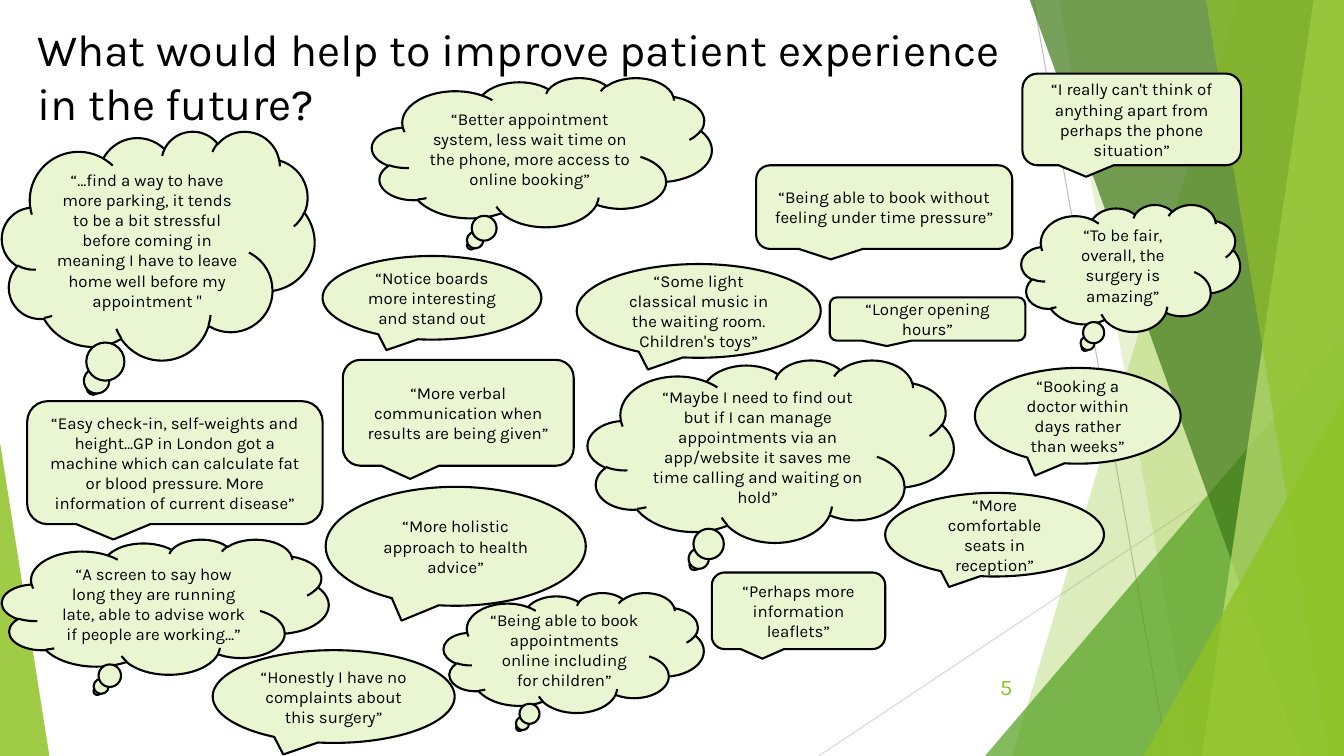
import pptx
import pptx.util
import pptx.dml.color
import pptx.enum.shapes
import pptx.enum.text
import pptx.oxml
import pptx.oxml.ns

RGB = pptx.dml.color.RGBColor
SHAPE = pptx.enum.shapes.MSO_SHAPE
ALIGN = pptx.enum.text.PP_ALIGN
ANCHOR = pptx.enum.text.MSO_ANCHOR

PX = 9144
WIDTH, HEIGHT = 1333, 750
BLEED = -1
FONT = "Karla"

BLACK = RGB(0x00, 0x00, 0x00)
BUBBLE = RGB(0xEA, 0xF6, 0xD1)
LIME = RGB(0x90, 0xC2, 0x26)
GREEN = RGB(0x54, 0xA0, 0x21)
FOREST = RGB(0x3F, 0x78, 0x19)
PALE = RGB(0xC0, 0xE4, 0x74)
GREY = RGB(0xBF, 0xBF, 0xBF)
LIGHT_GREY = RGB(0xD9, 0xD9, 0xD9)

TITLE = "What would help to improve patient experience in the future?"
PAGE_NUMBER = "5"

RULES = [
    ((1025, 0), (1158, HEIGHT), GREY),
    ((WIDTH, 403), (812, HEIGHT), LIGHT_GREY),
]

# kind, geometry, colour, opacity
FACETS = [
    ("band", (1228, 1004), LIME, 30),
    ("band", (1050, 1183), LIME, 20),
    ("triangle", (977, 333, 356, 417, 1), GREEN, 72),
    ("band", (1021, 1291), FOREST, 70),
    ("band", (1303, 1192), PALE, 70),
    ("band", (1196, 1318), LIME, 65),
    ("triangle", (1134, 393, 199, 357, 1), LIME, 80),
    ("triangle", (0, 439, 49, 311, 0), LIME, 85),
]

OVAL = SHAPE.OVAL_CALLOUT
CLOUD = SHAPE.CLOUD_CALLOUT
ROUNDED = SHAPE.ROUNDED_RECTANGULAR_CALLOUT

QUOTES = [
    (OVAL, (878, 489, 217, 83), "“More comfortable seats in reception”"),
    (CLOUD, (1013, 203, 217, 126), "“To be fair, overall, the surgery is amazing”"),
    (ROUNDED, (1014, 73, 217, 91),
     "“I really can't think of anything apart from perhaps the phone situation”"),
    (OVAL, (320, 254, 217, 83), "“Notice boards more interesting and stand out"),
    (CLOUD, (583, 357, 363, 181),
     "“Maybe I need to find out but if I can manage appointments via an "
     "app/website it saves me time calling and waiting on hold”"),
    (ROUNDED, (27, 398, 293, 122),
     "“Easy check-in, self-weights and height…GP in London got a machine which "
     "can calculate fat or blood pressure. More information of current disease”"),
    (OVAL, (211, 645, 240, 92), "“Honestly I have no complaints about this surgery”"),
    (ROUNDED, (340, 357, 229, 105),
     "“More verbal communication when results are being given”"),
    (OVAL, (323, 483, 258, 118), "“More holistic approach to health advice”"),
    (OVAL, (572, 262, 242, 93),
     "“Some light classical music in the waiting room.\nChildren's toys”"),
    (CLOUD, (369, 77, 337, 148),
     "“Better appointment system, less wait time on the phone, more access to "
     "online booking”"),
    (ROUNDED, (750, 164, 254, 83),
     "“Being able to book without feeling under time pressure”"),
    (CLOUD, (2, 130, 310, 227),
     "“…find a way to have more parking, it tends to be a bit stressful before "
     "coming in meaning I have to leave home well before my appointment \""),
    (OVAL, (967, 365, 204, 95), "“Booking a doctor within days rather than weeks”"),
    (ROUNDED, (823, 295, 194, 43), "“Longer opening hours”"),
    (CLOUD, (2, 535, 324, 134),
     "“A screen to say how long they are running late, able to advise work if "
     "people are working…”"),
    (CLOUD, (440, 588, 258, 119),
     "“Being able to book appointments online including for children”"),
    (ROUNDED, (706, 568, 172, 76), "“Perhaps more information leaflets”"),
]


def emu(lengths):
    return [length * PX for length in lengths]


def write(box, text, size=12, color=BLACK, align=ALIGN.CENTER, anchor=ANCHOR.MIDDLE):
    frame = box.text_frame
    frame.word_wrap = True
    frame.vertical_anchor = anchor
    for index, line in enumerate(text.split("\n")):
        para = frame.add_paragraph() if index else frame.paragraphs[0]
        para.alignment = align
        span = para.add_run()
        span.text = line
        span.font.name = FONT
        span.font.size = pptx.util.Pt(size)
        span.font.color.rgb = color


def add_rule(page, start, end, color):
    rule = page.shapes.add_connector(
        pptx.enum.shapes.MSO_CONNECTOR.STRAIGHT, *emu(start + end))
    rule.line.color.rgb = color
    rule.line.width = pptx.util.Pt(0.75)
    properties = rule.element.find(pptx.oxml.ns.qn("p:spPr"))
    properties.append(
        pptx.oxml.parse_xml(f"<a:effectLst {pptx.oxml.ns.nsdecls('a')}/>"))


def add_facet(page, kind, geometry, color, opacity):
    if kind == "band":
        top_left, bottom_left = geometry
        builder = page.shapes.build_freeform(top_left, BLEED, scale=PX)
        builder.add_line_segments(
            [(WIDTH, BLEED), (WIDTH, HEIGHT), (bottom_left, HEIGHT)], close=True)
        facet = builder.convert_to_shape()
    else:
        facet = page.shapes.add_shape(SHAPE.ISOSCELES_TRIANGLE, *emu(geometry[:4]))
        facet.adjustments[0] = geometry[4]
    facet.shadow.inherit = False
    facet.fill.solid()
    facet.fill.fore_color.rgb = color
    facet.line.fill.background()
    tint = next(facet.element.iter(pptx.oxml.ns.qn("a:srgbClr")))
    tint.append(pptx.oxml.parse_xml(
        f"<a:alpha {pptx.oxml.ns.nsdecls('a')} val='{opacity * 1000}'/>"))


def add_quote(page, kind, bounds, text):
    bubble = page.shapes.add_shape(kind, *emu(bounds))
    bubble.shadow.inherit = False
    bubble.fill.solid()
    bubble.fill.fore_color.rgb = BUBBLE
    bubble.line.color.rgb = BLACK
    bubble.line.width = pptx.util.Pt(1.5)
    write(bubble, text)


def main():
    deck = pptx.Presentation()
    deck.slide_width, deck.slide_height = emu((WIDTH, HEIGHT))
    page = deck.slides.add_slide(deck.slide_layouts[6])
    for rule in RULES:
        add_rule(page, *rule)
    for facet in FACETS:
        add_facet(page, *facet)
    title = page.shapes.add_textbox(*emu((27, 17, 995, 108)))
    write(title, TITLE, size=32, align=ALIGN.LEFT, anchor=ANCHOR.TOP)
    number = page.shapes.add_textbox(*emu((939, 661, 75, 40)))
    write(number, PAGE_NUMBER, size=16, color=LIME, align=ALIGN.RIGHT)
    for quote in QUOTES:
        add_quote(page, *quote)
    deck.save("out.pptx")


if __name__ == "__main__":
    main()
